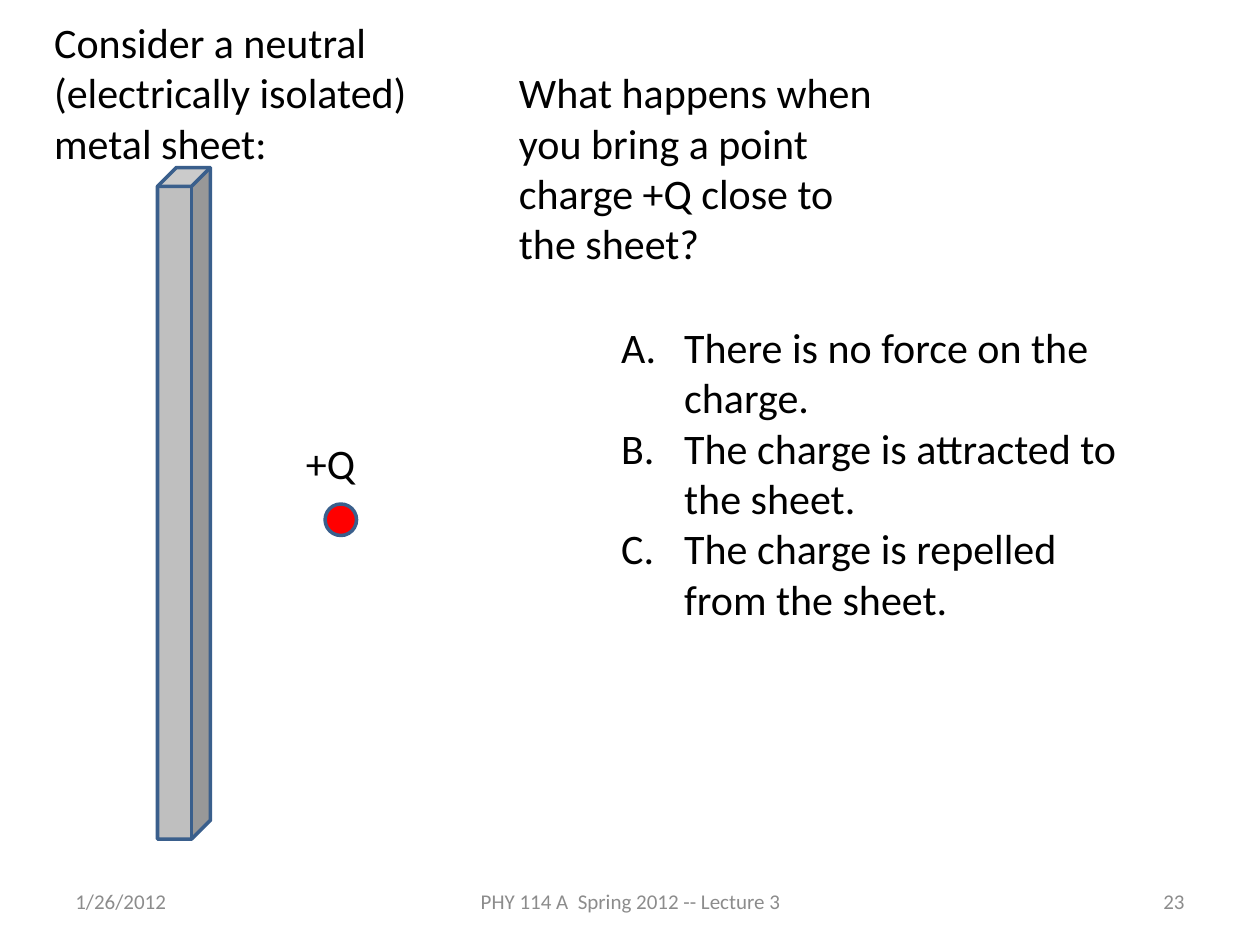
from lxml.etree import SubElement
from pptx import Presentation
from pptx.dml.color import RGBColor
from pptx.enum.shapes import MSO_SHAPE as SHAPE
from pptx.enum.text import MSO_ANCHOR as ANCHOR, MSO_AUTO_SIZE as AUTO, PP_ALIGN as ALIGN
from pptx.oxml.ns import qn
from pptx.util import Inches, Pt

BLACK = RGBColor(0x00, 0x00, 0x00)
FOOTER_GRAY = RGBColor(0x8C, 0x8C, 0x8C)
METAL = RGBColor(0xBF, 0xBF, 0xBF)
RED = RGBColor(0xFF, 0x00, 0x00)
OUTLINE = RGBColor(0x3A, 0x5F, 0x8C)

# Content: boxes are left, top, width, height in inches
INTRO = ("Consider a neutral (electrically isolated) metal sheet:", (0.33, 0.08, 3.67, 1.31))
ANSWERS = ([
    "There is no force on the charge.",
    "The charge is attracted to the sheet.",
    "The charge is repelled from the sheet.",
], (4.83, 2.5, 4.25, 2.52))
LABELS = [
    ("What happens when you bring a point charge +Q close to the sheet?", (4.02, 0.48, 3.08, 1.72)),
    ("+Q", (2.33, 3.42, 0.67, 0.5)),
]
FOOTERS = [
    ("1/26/2012", (0.5, 6.95, 2.33, 0.4), ALIGN.LEFT),
    ("PHY 114 A  Spring 2012 -- Lecture 3", (3.42, 6.95, 3.17, 0.4), ALIGN.CENTER),
    ("23", (7.17, 6.95, 2.33, 0.4), ALIGN.RIGHT),
]
SHEET = (SHAPE.CUBE, (1.25, 1.33, 0.42, 5.33), METAL)
CHARGE = (SHAPE.OVAL, (2.58, 4, 0.25, 0.25), RED)

BODY_FONT = {"name": "Calibri", "size": Pt(24)}
FOOTER_FONT = {"name": "Calibri", "size": Pt(12)}
FRAME = {"word_wrap": True, "auto_size": AUTO.NONE}


def inches(box):
    return [Inches(v) for v in box]


def fill_text(sp, lines, box, font=BODY_FONT, color=BLACK, align=ALIGN.LEFT, anchor=ANCHOR.TOP):
    """Place a text shape and write one formatted paragraph per line."""
    sp.left, sp.top, sp.width, sp.height = inches(box)
    tf = sp.text_frame
    for name, value in FRAME.items():
        setattr(tf, name, value)
    tf.vertical_anchor = anchor
    for i, line in enumerate(lines):
        p = tf.add_paragraph() if i else tf.paragraphs[0]
        p.alignment = align
        p.space_before = Pt(0)
        r = p.add_run()
        r.text = line
        for name, value in font.items():
            setattr(r.font, name, value)
        r.font.color.rgb = color
    return tf


def add_body(s, kind, box, color):
    sp = s.shapes.add_shape(kind, *inches(box))
    sp.shadow.inherit = False
    sp.fill.solid()
    sp.fill.fore_color.rgb = color
    sp.line.color.rgb = OUTLINE
    sp.line.width = Pt(2)
    return sp


def letter_list(tf):
    """Number the paragraphs A., B., C. with a hanging indent."""
    indent = Inches(0.5)
    for p in tf.paragraphs:
        pPr = p._p.get_or_add_pPr()
        pPr.set("marL", str(indent))
        pPr.set("indent", str(-indent))
        SubElement(pPr, qn("a:buFont"), typeface="+mj-lt")
        SubElement(pPr, qn("a:buAutoNum"), type="alphaUcPeriod")


prs = Presentation()
prs.slide_width, prs.slide_height = Inches(10), Inches(7.5)
s = prs.slides.add_slide(prs.slide_layouts[1])

# Metal sheet and point charge
add_body(s, *SHEET).adjustments[0] = 0.355
add_body(s, *CHARGE)

# Introduction and answers
fill_text(s.shapes.title, [INTRO[0]], INTRO[1])
letter_list(fill_text(s.placeholders[1], *ANSWERS))

# Question and charge label
for text, box in LABELS:
    fill_text(s.shapes.add_textbox(*inches(box)), [text], box)

# Footer
for text, box, align in FOOTERS:
    fill_text(s.shapes.add_textbox(*inches(box)), [text], box,
              FOOTER_FONT, FOOTER_GRAY, align, ANCHOR.MIDDLE)

prs.save("out.pptx")
